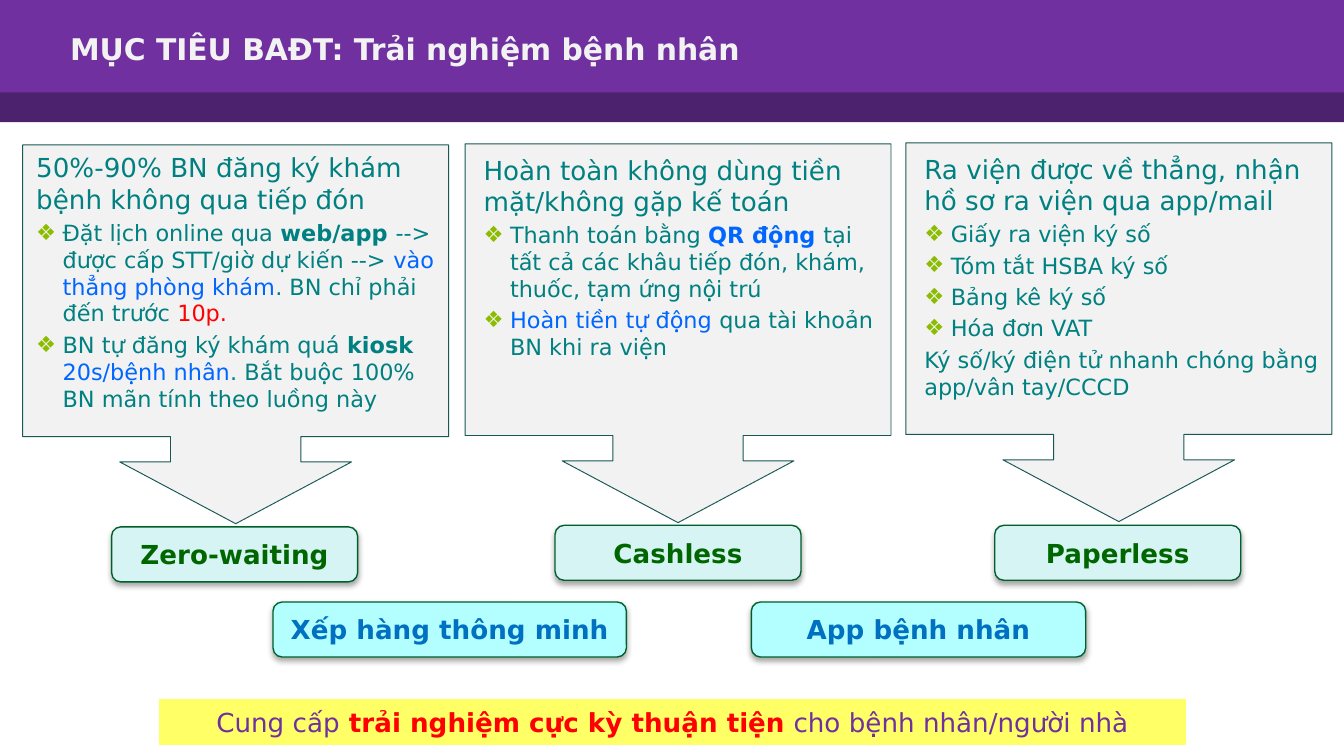
from lxml.etree import SubElement as Sub
from pptx import Presentation as Deck
from pptx.dml.color import RGBColor as Rgb
from pptx.enum.shapes import MSO_SHAPE as Kind
from pptx.enum.text import MSO_ANCHOR as Anchor, MSO_AUTO_SIZE as Auto, PP_ALIGN as Align
from pptx.oxml.ns import qn
from pptx.util import Cm, Pt

FONT = "DejaVu Sans"
HUES = {
    "purple": "7030A0", "plum": "4C216D", "pale": "F2F2F2", "edge": "175855",
    "teal": "008080", "blue": "0066FF", "red": "FF0000", "lime": "8BBC00",
    "mint": "D6F4F3", "aqua": "B3FFFF", "pine": "00602B", "green": "006600",
    "sky": "0070C0", "yellow": "FFFF66", "white": "FFFFFF", "black": "000000",
}
CARD_W, CARD_H, NOTE_H, PILL_W, PILL_H = 8.05, 7.16, 5.92, 4.65, 1.04

CARDS = [
    {
        "card": (0.43, 2.74), "note": (0.43, 2.74), "pill": (2.11, 9.96),
        "goal": "Zero-waiting",
        "head": "50%-90% BN đăng ký khám bệnh không qua tiếp đón",
        "list": [
            [("Đặt lịch online qua ",), ("web/app ", "teal", True),
             ("--> được cấp STT/giờ dự kiến --> ",),
             ("vào thẳng phòng khám", "blue"),
             (". BN chỉ phải đến trước ",), ("10p.", "red")],
            [("BN tự đăng ký khám quá ",), ("kiosk ", "teal", True),
             ("20s/bệnh nhân", "blue"),
             (". Bắt buộc 100% BN mãn tính theo luồng này",)],
        ],
    },
    {
        "card": (8.79, 2.72), "note": (8.89, 2.79), "pill": (10.49, 9.93),
        "goal": "Cashless",
        "head": "Hoàn toàn không dùng tiền mặt/không gặp kế toán",
        "list": [
            [("Thanh toán bằng ",), ("QR động ", "blue", True),
             ("tại tất cả các khâu tiếp đón, khám, thuốc, tạm ứng nội trú",)],
            [("Hoàn tiền tự động", "blue"),
             (" qua tài khoản BN khi ra viện",)],
        ],
    },
    {
        "card": (17.12, 2.7), "note": (17.22, 2.77), "pill": (18.8, 9.93),
        "goal": "Paperless",
        "head": "Ra viện được về thẳng, nhận hồ sơ ra viện qua app/mail",
        "list": [
            [("Giấy ra viện ký số",)], [("Tóm tắt HSBA ký số",)],
            [("Bảng kê ký số",)], [("Hóa đơn VAT",)],
        ],
        "tail": "Ký số/ký điện tử nhanh chóng bằng app/vân tay/CCCD",
    },
]


def tint(name):
    return Rgb.from_string(HUES[name])


def place(shape, x, y, w, h):
    shape.left, shape.top, shape.width, shape.height = Cm(x), Cm(y), Cm(w), Cm(h)


def write(para, runs, size, hue="teal", bold=False):
    font = para.font
    font.name, font.size = FONT, Pt(size)
    mixed = len(runs) > 1
    if not mixed:
        font.bold, font.color.rgb = bold, tint(hue)
    for text, *look in runs:
        run = para.add_run()
        run.text = text
        if mixed:
            run.font.color.rgb = tint(look[0] if look else hue)
            run.font.bold = len(look) > 1


def add_box(slide, kind, box, fill, line=None, width=0.75):
    shape = slide.shapes.add_shape(kind, *map(Cm, box))
    shape.shadow.inherit = False
    shape.fill.solid()
    shape.fill.fore_color.rgb = tint(fill)
    if line:
        shape.line.color.rgb = tint(line)
        shape.line.width = Pt(width)
    else:
        shape.line.fill.background()
    return shape


def label(shape, runs, hue, bold=False):
    frame = shape.text_frame
    frame.word_wrap = True
    frame.vertical_anchor = Anchor.MIDDLE
    para = frame.paragraphs[0]
    para.alignment = Align.CENTER
    write(para, runs, 14, hue, bold)


def add_shade(shape):
    glow = shape._element.spPr.find(qn("a:effectLst"))
    outer = Sub(glow, qn("a:outerShdw"), blurRad=str(Pt(3.1)), dist=str(Pt(1.8)),
                dir="5400000", rotWithShape="0")
    shade = Sub(outer, qn("a:srgbClr"), val=HUES["black"])
    Sub(shade, qn("a:alpha"), val="35000")


def add_pill(slide, box, text, fill, hue):
    pill = add_box(slide, Kind.ROUNDED_RECTANGLE, box, fill, "pine")
    add_shade(pill)
    label(pill, [(text,)], hue, True)


def add_card(slide, x, y):
    card = add_box(slide, Kind.DOWN_ARROW_CALLOUT, (x, y, CARD_W, CARD_H),
                   "pale", "edge", 0.5)
    for i, value in enumerate((0.344, 0.306, 0.163, 0.77)):
        card.adjustments[i] = value


def set_mark(para, mark):
    props = para._p.get_or_add_pPr()
    step = Cm(0.5) if mark else 0
    props.set("marL", str(step))
    props.set("indent", str(-step))
    if mark:
        Sub(Sub(props, qn("a:buClr")), qn("a:srgbClr"), val=HUES["lime"])
        Sub(props, qn("a:buFont"), typeface=FONT)
        Sub(props, qn("a:buChar"), char="❖")
    else:
        Sub(props, qn("a:buNone"))


def fill_note(shape, card):
    place(shape, *card["note"], CARD_W, NOTE_H)
    frame = shape.text_frame
    frame.word_wrap = True
    frame.auto_size = Auto.NONE
    rows = [([(card["head"],)], 14, False)]
    rows += [(runs, 12, True) for runs in card["list"]]
    if "tail" in card:
        rows.append(([(card["tail"],)], 12, False))
    for i, (runs, size, mark) in enumerate(rows):
        para = frame.add_paragraph() if i else frame.paragraphs[0]
        set_mark(para, mark)
        para.space_before = Pt(2.4 if i else 0)
        write(para, runs, size)


def set_title(slide, text):
    title = slide.shapes.title
    slide.shapes._spTree.append(title._element)
    place(title, 1.07, 0.33, 20.52, 1.17)
    frame = title.text_frame
    frame.auto_size = Auto.NONE
    frame.vertical_anchor = Anchor.MIDDLE
    para = frame.paragraphs[0]
    para.alignment = Align.LEFT
    write(para, [(text,)], 16, "pale", True)


def main():
    deck = Deck()
    deck.slide_width, deck.slide_height = Cm(25.4), Cm(14.29)
    slide = deck.slides.add_slide(deck.slide_layouts[1])
    body = slide.placeholders[1]

    add_box(slide, Kind.RECTANGLE, (0, 1.65, 25.4, 0.66), "plum")
    add_box(slide, Kind.RECTANGLE, (0, 0, 25.4, 1.75), "purple")
    set_title(slide, "MỤC TIÊU BAĐT: Trải nghiệm bệnh nhân")

    for i, card in enumerate(CARDS):
        add_card(slide, *card["card"])
        if i:
            note = slide.shapes.add_textbox(0, 0, 0, 0)
        else:
            note = body
            slide.shapes._spTree.append(body._element)
        fill_note(note, card)
        add_pill(slide, (*card["pill"], PILL_W, PILL_H), card["goal"], "mint", "green")

    for x, w, text in ((5.16, 6.68, "Xếp hàng thông minh"), (14.2, 6.32, "App bệnh nhân")):
        add_pill(slide, (x, 11.38, w, PILL_H), text, "aqua", "sky")

    strip = add_box(slide, Kind.RECTANGLE, (2.97, 13.18, 19.48, 0.94), "yellow", "white", 2)
    label(strip, [("Cung cấp",), (" trải nghiệm cực kỳ thuận tiện", "red", True),
                  (" cho bệnh nhân/người nhà",)], "purple")
    deck.save("out.pptx")


if __name__ == "__main__":
    main()
